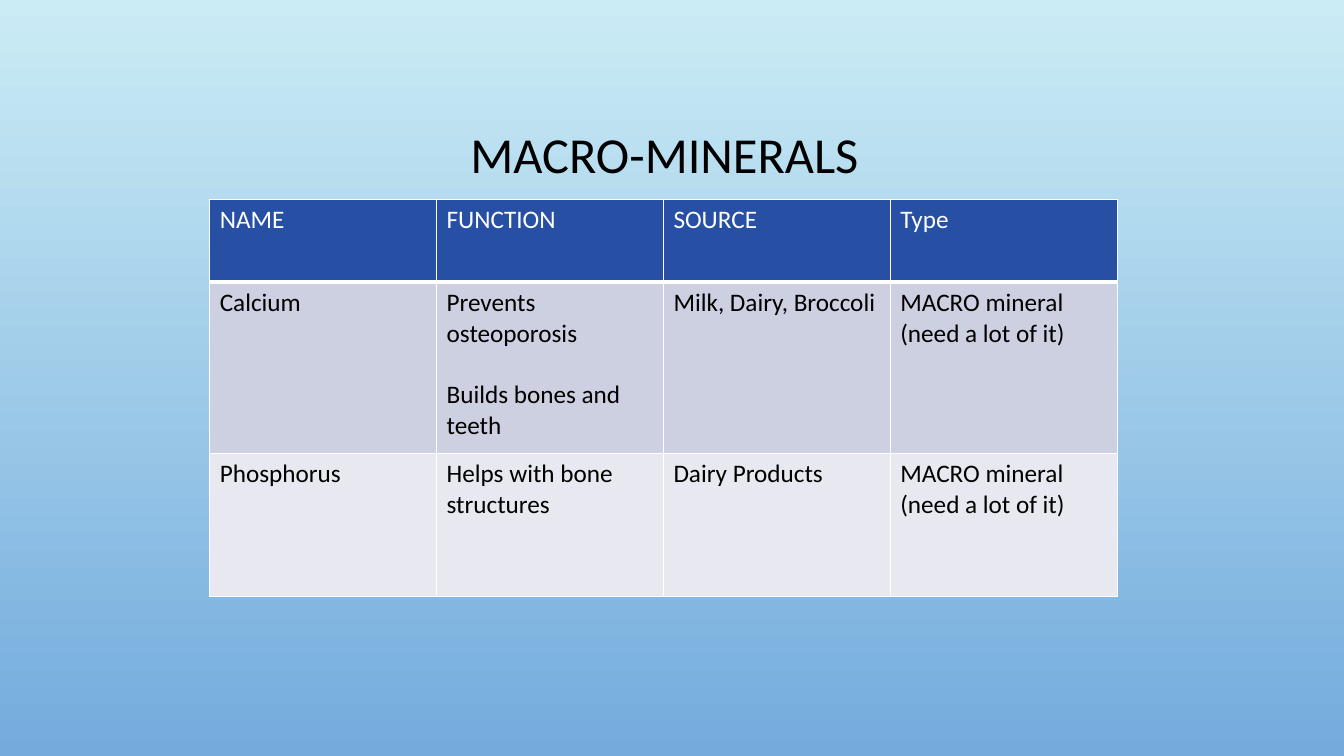
import pptx
import pptx.dml.color
import pptx.enum.text
import pptx.oxml
import pptx.oxml.ns
import pptx.util

RGBColor = pptx.dml.color.RGBColor
Inches = pptx.util.Inches
Pt = pptx.util.Pt

SKY_TOP = RGBColor(0xCB, 0xEC, 0xF5)
SKY_BOTTOM = RGBColor(0x73, 0xAB, 0xDD)
HEADER_BLUE = RGBColor(0x27, 0x4F, 0xA4)
BAND_DARK = RGBColor(0xCD, 0xD0, 0xE0)
BAND_LIGHT = RGBColor(0xE8, 0xE9, 0xF0)
WHITE = RGBColor(0xFF, 0xFF, 0xFF)
BLACK = RGBColor(0, 0, 0)

FONT = "Calibri"
COLUMN = 2.25
ROWS = (0.82, 1.7, 1.42)
PARAGRAPH_GAP = 22
MACRO_TYPE = "MACRO mineral (need a lot of it)"
MINERALS = (
    ("NAME", "FUNCTION", "SOURCE", "Type"),
    ("Calcium", "Prevents osteoporosis\nBuilds bones and teeth",
     "Milk, Dairy, Broccoli", MACRO_TYPE),
    ("Phosphorus", "Helps with bone structures", "Dairy Products", MACRO_TYPE),
)


def style_font(font, size, color):
    """Apply the slide's typeface with a size and colour."""
    font.name = FONT
    font.size = Pt(size)
    font.bold = False
    font.color.rgb = color


def paint_background(slide):
    """Fill the slide with the vertical sky gradient."""
    fill = slide.background.fill
    fill.gradient()
    fill.gradient_angle = 270
    for stop, color in zip(fill.gradient_stops, (SKY_TOP, SKY_BOTTOM)):
        stop.color.rgb = color


def write_title(slide, text):
    """Place and format the title placeholder."""
    title = slide.shapes.title
    title.left, title.top = Inches(1), Inches(0.68)
    title.width, title.height = Inches(11.33), Inches(1.75)
    frame = title.text_frame
    frame.text = text
    frame.vertical_anchor = pptx.enum.text.MSO_ANCHOR.MIDDLE
    heading = frame.paragraphs[0]
    heading.alignment = pptx.enum.text.PP_ALIGN.CENTER
    heading.line_spacing = 0.9
    style_font(heading.runs[0].font, 36, BLACK)


def draw_borders(cell, bottom):
    """Give a cell white borders, with its own bottom width."""
    properties = cell._tc.get_or_add_tcPr()
    for side, width in (("L", 1), ("R", 1), ("T", 1), ("B", bottom)):
        properties.append(pptx.oxml.parse_xml(
            f'<a:ln{side} {pptx.oxml.ns.nsdecls("a")} w="{Pt(width)}">'
            f'<a:solidFill><a:srgbClr val="{WHITE}"/></a:solidFill></a:ln{side}>'))


def fill_cell(cell, text, fill, color, bottom):
    """Write one table cell with its fill, borders and text."""
    draw_borders(cell, bottom)
    cell.fill.solid()
    cell.fill.fore_color.rgb = fill
    cell.text_frame.text = text
    for index, paragraph in enumerate(cell.text_frame.paragraphs):
        if index:
            paragraph.space_before = Pt(PARAGRAPH_GAP)
        style_font(paragraph.runs[0].font, 18, color)


def add_mineral_table(slide):
    """Add the table of minerals, one row style per band."""
    columns = len(MINERALS[0])
    minerals = slide.shapes.add_table(
        len(MINERALS), columns, Inches(2.08), Inches(1.98),
        Inches(COLUMN * columns), Inches(sum(ROWS))).table
    for column in minerals.columns:
        column.width = Inches(COLUMN)
    bands = ((HEADER_BLUE, WHITE, 3), (BAND_DARK, BLACK, 1), (BAND_LIGHT, BLACK, 1))
    for row, height, texts, band in zip(minerals.rows, ROWS, MINERALS, bands):
        row.height = Inches(height)
        for cell, text in zip(row.cells, texts):
            fill_cell(cell, text, *band)


def main():
    """Build and save the macro-minerals slide."""
    deck = pptx.Presentation()
    deck.slide_width, deck.slide_height = Inches(13.33), Inches(7.5)
    slide = deck.slides.add_slide(deck.slide_layouts[5])
    paint_background(slide)
    write_title(slide, "MACRO-MINERALS\t")
    add_mineral_table(slide)
    deck.save("out.pptx")


if __name__ == "__main__":
    main()
